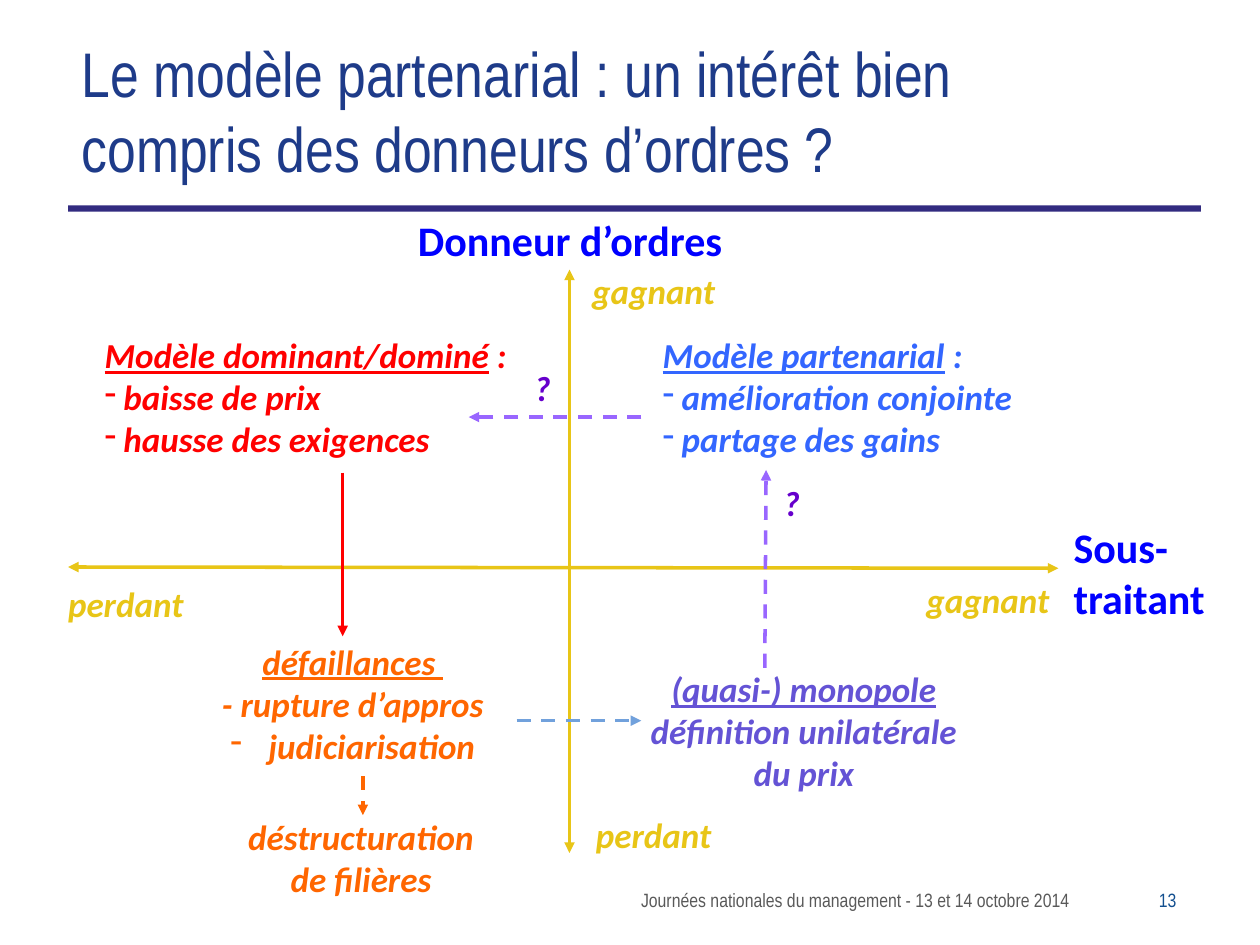
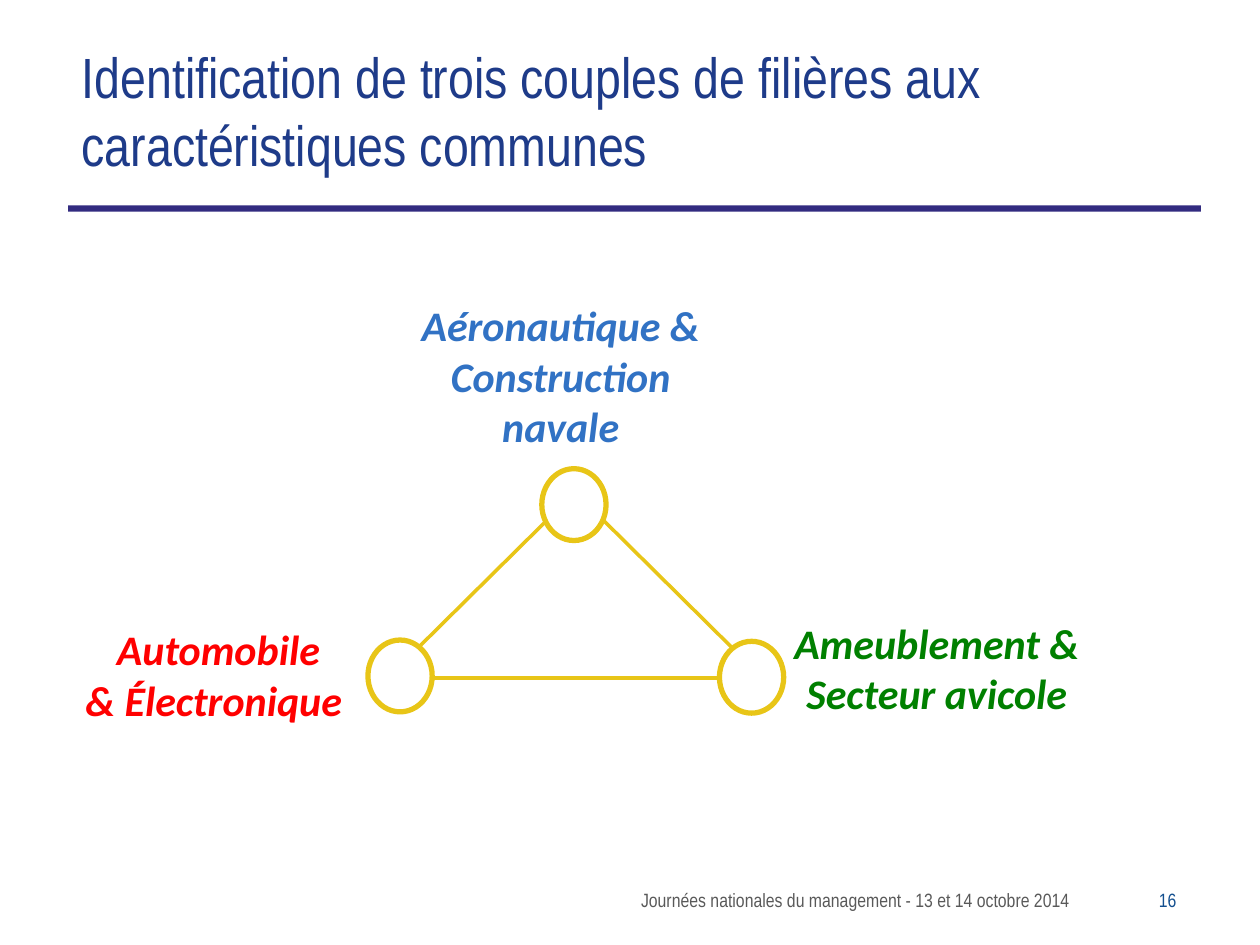
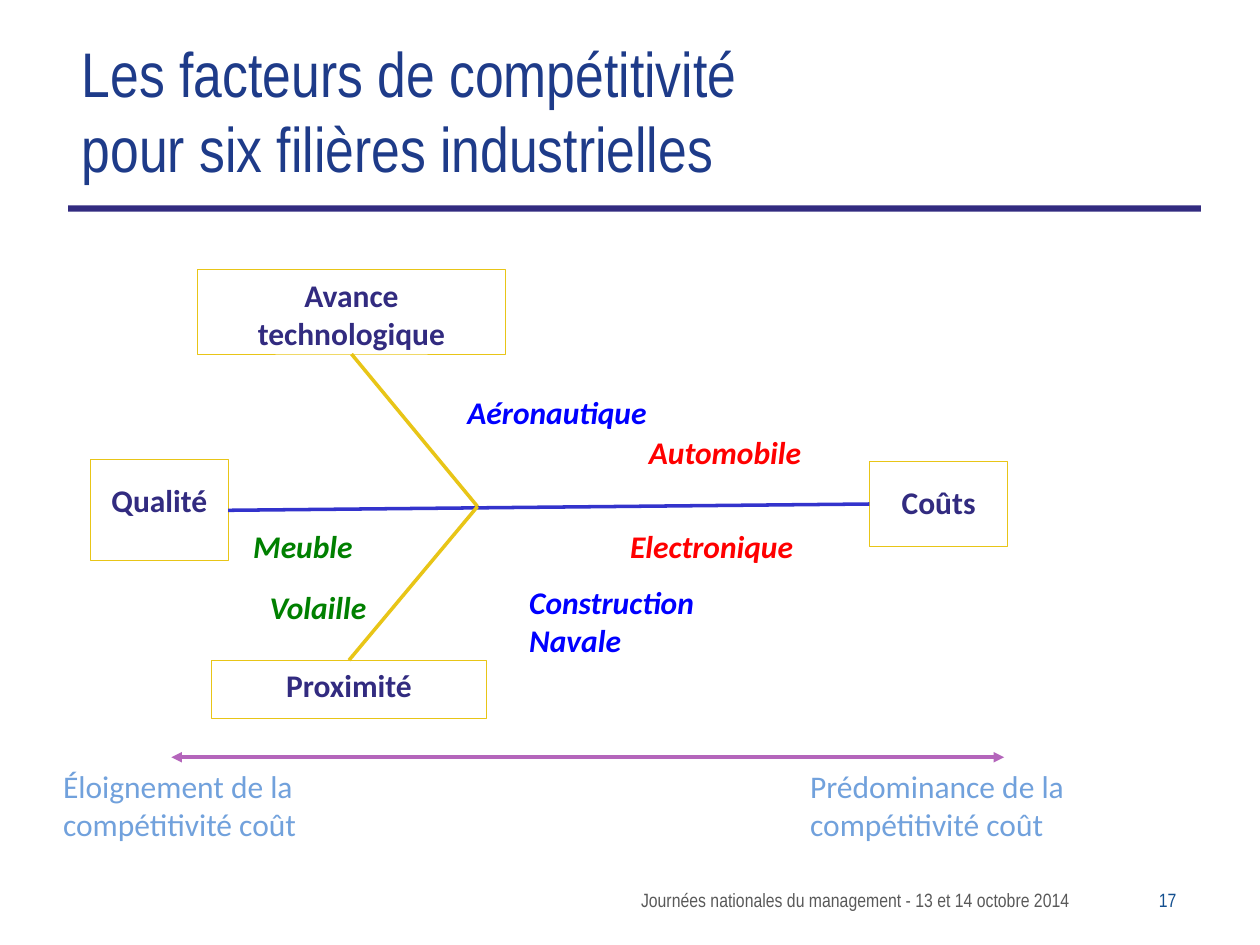
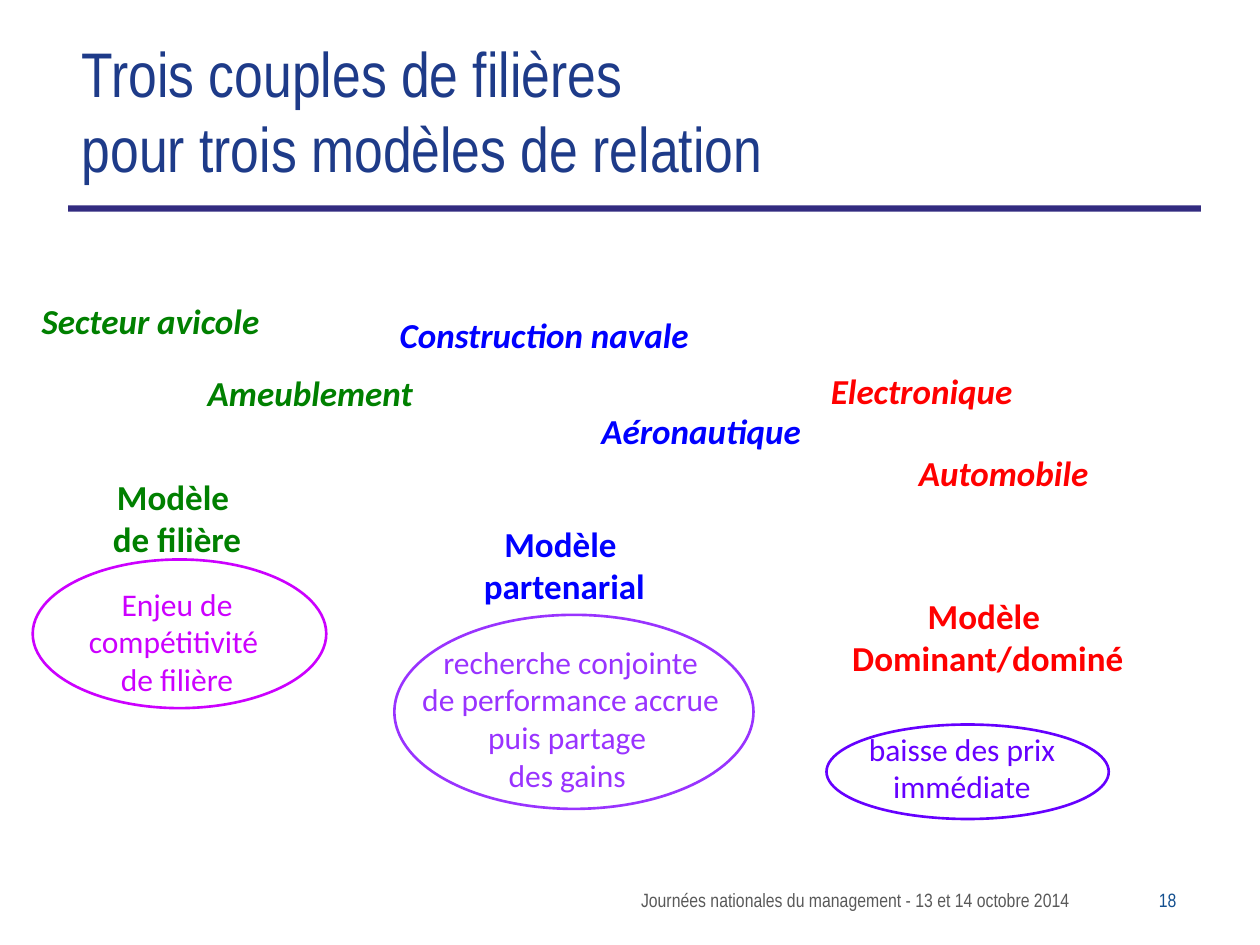
from lxml import etree
from pptx import Presentation
from pptx.dml.color import RGBColor
from pptx.enum.dml import MSO_LINE
from pptx.enum.shapes import MSO_CONNECTOR, MSO_SHAPE
from pptx.enum.text import MSO_ANCHOR, PP_ALIGN
from pptx.oxml.ns import qn
from pptx.util import Inches, Pt

RECT, OVAL = MSO_SHAPE.RECTANGLE, MSO_SHAPE.OVAL
STRAIGHT, DASH = MSO_CONNECTOR.STRAIGHT, MSO_LINE.DASH
LEFT, CENTER, RIGHT = PP_ALIGN.LEFT, PP_ALIGN.CENTER, PP_ALIGN.RIGHT
TOP, MIDDLE = MSO_ANCHOR.TOP, MSO_ANCHOR.MIDDLE
color = RGBColor.from_string

GOLD, INDIGO, WHITE = "E8C517", "322B80", "FFFFFF"
RED, BLUE, GREEN = "FF0000", "0000FF", "008000"
ORANGE, SKY, LILAC, PURPLE = "FF6600", "71A1DC", "9966FF", "6600CC"
NARROW, MARGIN = "Arial Narrow", (1, 0.5, 1, 0.5)

prs = Presentation()
prs.slide_width, prs.slide_height = Inches(10), Inches(7.5)
COL, ROW = prs.slide_width / 100, prs.slide_height / 75


def add_text(s, x, y, w, h, text="", kind=None, fill=None, outline=None, weight=0.5,
             size=20, font="Calibri", ink=GOLD, bold=True, italic=False, align=LEFT,
             anchor=TOP, inset=(0, 0, 0, 0), underlined="", bullets=(), hang=1.5):
    """Add a text box, or a shape of the given kind, placed in grid columns and rows.

    underlined is the start of the first paragraph; bullets lists dashed paragraphs.
    """
    box = [int(v) for v in (x * COL, y * ROW, w * COL, h * ROW)]
    if kind is None:
        sp = s.shapes.add_textbox(*box)
    else:
        sp = s.shapes.add_shape(kind, *box)
        sp.shadow.inherit = False
        if fill:
            sp.fill.solid()
            sp.fill.fore_color.rgb = color(fill)
        else:
            sp.fill.background()
        if outline:
            sp.line.color.rgb = color(outline)
            sp.line.width = Pt(weight)
        else:
            sp.line.fill.background()
    if not text:
        return sp
    tf = sp.text_frame
    tf.word_wrap, tf.vertical_anchor = True, anchor
    left, top, right, bottom = inset
    tf.margin_left, tf.margin_right = int(left * COL), int(right * COL)
    tf.margin_top, tf.margin_bottom = int(top * ROW), int(bottom * ROW)
    for i, line in enumerate(text.split("\n")):
        p = tf.paragraphs[0] if i == 0 else tf.add_paragraph()
        if i in bullets:
            pPr = p._p.get_or_add_pPr()
            pPr.set("marL", str(int(hang * COL)))
            pPr.set("indent", str(-int(hang * COL)))
            etree.SubElement(pPr, qn("a:buChar")).set("char", "-")
        p.alignment = align
        if i == 0 and underlined:
            p.text = underlined
            p.runs[0].font.underline = True
            line = line[len(underlined):]
            if line:
                p.add_run().text = line
        else:
            p.text = line
        for r in p.runs:
            r.font.name, r.font.size = font, Pt(size)
            r.font.bold, r.font.italic = bold, italic
            r.font.color.rgb = color(ink)
    return sp


def add_line(s, x1, y1, x2, y2, ink=GOLD, dash=False, ends=()):
    """Add a straight line; ends names the arrowheads, headEnd before tailEnd."""
    c = s.shapes.add_connector(STRAIGHT, int(x1 * COL), int(y1 * ROW),
                               int(x2 * COL), int(y2 * ROW))
    c.line.color.rgb, c.line.width = color(ink), Pt(2)
    if dash:
        c.line.dash_style = DASH
    spPr = c.element.spPr
    for end in ends:
        etree.SubElement(spPr.find(qn("a:ln")), qn("a:" + end)).set("type", "triangle")
    etree.SubElement(spPr, qn("a:effectLst"))
    return c


BOTH, TAIL = ("headEnd", "tailEnd"), ("tailEnd",)

# What the slides share: footer, number, rule and title
slides = []
for number, title, size in [
    (13, "Le modèle partenarial : un intérêt bien compris des donneurs d’ordres ?", 36),
    (16, "Identification de trois couples de filières aux caractéristiques communes", 32.4),
    (17, "Les facteurs de compétitivité\vpour six filières industrielles", 36),
    (18, "Trois couples de filières\vpour trois modèles de relation", 36),
]:
    s = prs.slides.add_slide(prs.slide_layouts[6])
    small = dict(size=11, font=NARROW, bold=False, inset=MARGIN)
    add_text(s, 39.7, 70, 46.2, 2.9, "Journées nationales du management - 13 et 14 octobre 2014",
             ink="595959", align=RIGHT, **small)
    add_text(s, 91, 70, 7.6, 2.9, str(number), ink="134F8F", **small)
    add_text(s, 5.4, 16.3, 89.9, 0.5, kind=RECT, fill=INDIGO)
    add_text(s, 5.5, 2.6, 85.2, 12.2, title, size=size, font=NARROW, ink="1E3B89",
             bold=False, anchor=MIDDLE, inset=MARGIN)
    slides.append(s)
axes, triangle, factors, models = slides

# Slide 13: win/lose axes and the four quadrants
s = axes
add_line(s, 45.2, 21.4, 45.2, 67.7, ends=BOTH)
add_line(s, 5.4, 45, 84, 45.1, ends=BOTH)
for x, y, label, align in [(47, 21.4, "gagnant", LEFT), (70.3, 45.9, "gagnant", CENTER),
                           (5.4, 46.2, "perdant", LEFT), (47.3, 64.6, "perdant", LEFT)]:
    add_text(s, x, y, 16.2, 3.6, label, italic=True, align=align)
add_text(s, 30.6, 17, 29.3, 4.4, "Donneur d’ordres", size=24, ink=BLUE, align=CENTER)
add_text(s, 85.2, 41.4, 12.2, 8.2, "Sous-\ntraitant", size=24, ink=BLUE)

for x, y, w, h, text, underlined, ink, align, bullets, hang in [
    (8.3, 26.5, 33.4, 9.9, "Modèle dominant/dominé :\nbaisse de prix\nhausse des exigences",
     "Modèle dominant/dominé", RED, LEFT, (1, 2), 1.5),
    (52.6, 26.5, 32.6, 9.9, "Modèle partenarial :\namélioration conjointe\npartage des gains",
     "Modèle partenarial", "3366FF", LEFT, (1, 2), 1.5),
    (16.9, 50.8, 22.2, 10.9, "défaillances \n- rupture d’appros\njudiciarisation",
     "défaillances ", ORANGE, CENTER, (2,), 3),
    (47.3, 53, 33, 9.9, "(quasi-) monopole\ndéfinition unilatérale\ndu prix",
     "(quasi-) monopole", "6453D5", CENTER, (), 0),
    (18.2, 64.7, 20.9, 6.9, "déstructuration\nde filières", "", ORANGE, CENTER, (), 0),
    (42.4, 29.1, 2.8, 4, "?", "", PURPLE, LEFT, (), 0),
    (62.2, 38.2, 2.2, 3.6, "?", "", PURPLE, LEFT, (), 0),
]:
    add_text(s, x, y, w, h, text, underlined=underlined, ink=ink, align=align,
             bullets=bullets, hang=hang, italic=True)

for x1, y1, x2, y2, ink, dash in [
    (27.2, 37.5, 27.2, 50.5, RED, False),
    (41, 57.2, 50.9, 57.2, SKY, True),
    (50.9, 33.1, 37.2, 33.1, LILAC, True),
    (60.7, 53, 60.8, 37.3, LILAC, True),
    (28.8, 61.6, 28.8, 64.7, ORANGE, True),
]:
    add_line(s, x1, y1, x2, y2, ink, dash, TAIL)

# Slide 16: triangle of sector pairs
s = triangle
for x, y, w, h, pair, ink in [
    (5.7, 49.5, 23.3, 9.5, "Automobile\n& Électronique ", RED),
    (31.8, 23.8, 25.4, 12.8, "Aéronautique &\nConstruction navale", "3172C4"),
    (62.2, 49, 24.3, 14, "Ameublement &\nSecteur avicole", GREEN),
]:
    add_text(s, x, y, w, h, pair, kind=RECT, fill=WHITE, size=24, ink=ink, italic=True,
             align=CENTER)
for x, y in [(29.2, 50.8), (57.1, 50.9), (43, 37.2)]:
    add_text(s, x, y, 5.1, 5.7, kind=OVAL, outline=GOLD, weight=3)
for ends in [(33.2, 51.4, 43.4, 41.3), (47.9, 41.3, 58.2, 51.5), (34.2, 53.8, 57.2, 53.8)]:
    add_line(s, *ends)

# Slide 17: competitiveness factors
s = factors
boxes = [
    add_text(s, x, y, w, h, factor, kind=RECT, fill=WHITE, outline=GOLD, size=18, ink=INDIGO,
             align=CENTER, inset=(1, top, 1, 0.5))
    for x, y, w, h, factor, top in [
        (15.7, 21.4, 24.4, 6.7, "Avance technologique", 0.5),
        (16.8, 52.4, 21.8, 4.6, "Proximité", 0.5),
        (7.2, 36.5, 10.9, 8, "Qualité", 1.7),
        (69, 36.6, 11, 6.8, "Coûts", 1.7),
    ]
]
advance, proximity, quality, costs = boxes
spine = add_line(s, 18.1, 40.3, 69, 40.2, "3333CC")
spine.begin_connect(quality, 3)
spine.end_connect(costs, 1)
for box, side, y in [(advance, 2, 28.1), (proximity, 0, 52.4)]:
    add_line(s, 27.8, y, 37.9, 40.2).begin_connect(box, side)
add_line(s, 13.6, 60.1, 79.7, 60.1, "B465BB", ends=BOTH)

add_text(s, 5, 60.9, 19.9, 6.7, "Éloignement de la compétitivité coût", kind=RECT,
         outline=WHITE, weight=0.75, size=18, ink=SKY, bold=False)
add_text(s, 64.3, 60.9, 22.4, 5, "Prédominance de la compétitivité coût",
         size=18, ink=SKY, bold=False)
for x, y, w, h, sector, ink in [
    (51.5, 34.4, 14.7, 3.5, "Automobile", RED),
    (50, 41.8, 13.8, 3.7, "Electronique", RED),
    (42, 46.3, 15.9, 7.9, "Construction Navale", BLUE),
    (20.1, 41.8, 10.1, 3.4, "Meuble", GREEN),
    (21.4, 46.7, 13.8, 3.7, "Volaille", GREEN),
    (37.1, 31.2, 16.2, 3.6, "Aéronautique", BLUE),
]:
    add_text(s, x, y, w, h, sector, size=18, ink=ink, italic=True)

# Slide 18: sectors, their models and what is at stake
s = models
for x, y, w, h, sector, ink in [
    (71.2, 35.8, 16.9, 4, "Automobile", RED),
    (44.8, 32.5, 21.7, 4.2, "Aéronautique", BLUE),
    (14.6, 29.5, 20.7, 4.1, "Ameublement ", GREEN),
    (1.6, 23.8, 20.7, 4.3, "Secteur avicole", GREEN),
    (30.5, 24.9, 25.4, 3.9, "Construction navale", BLUE),
    (63.2, 29.3, 19.9, 4.1, "Electronique", RED),
]:
    add_text(s, x, y, w, h, sector, ink=ink, italic=True, align=CENTER)
for model, model_at, ink, stake, stake_at, oval_at, stake_ink in [
    ("Modèle \nDominant/dominé", (67.5, 47.2, 21.8, 6.8), RED,
     "baisse des prix immédiate", (66.5, 57.9, 19.7, 8.5), (65.6, 57.5, 22.4, 7.5), "6600FF"),
    ("Modèle \npartenarial", (34, 41.5, 21.6, 7), BLUE,
     "recherche conjointe\nde performance accrue\npuis partage \ndes gains ",
     (31.5, 51, 27.6, 12.2), (31.3, 48.8, 28.5, 15.4), "9933FF"),
    ("Modèle \nde filière", (2.6, 37.7, 22.9, 8.2), GREEN,
     "Enjeu de\ncompétitivité \nde filière", (1.6, 46.4, 24.9, 10.4),
     (2.6, 44.4, 23.3, 11.8), "CC00FF"),
]:
    add_text(s, *model_at, model, ink=ink, align=CENTER)
    add_text(s, *stake_at, stake, size=18, ink=stake_ink, bold=False, align=CENTER)
    add_text(s, *oval_at, kind=OVAL, outline=stake_ink, weight=1.5)

prs.save("out.pptx")
